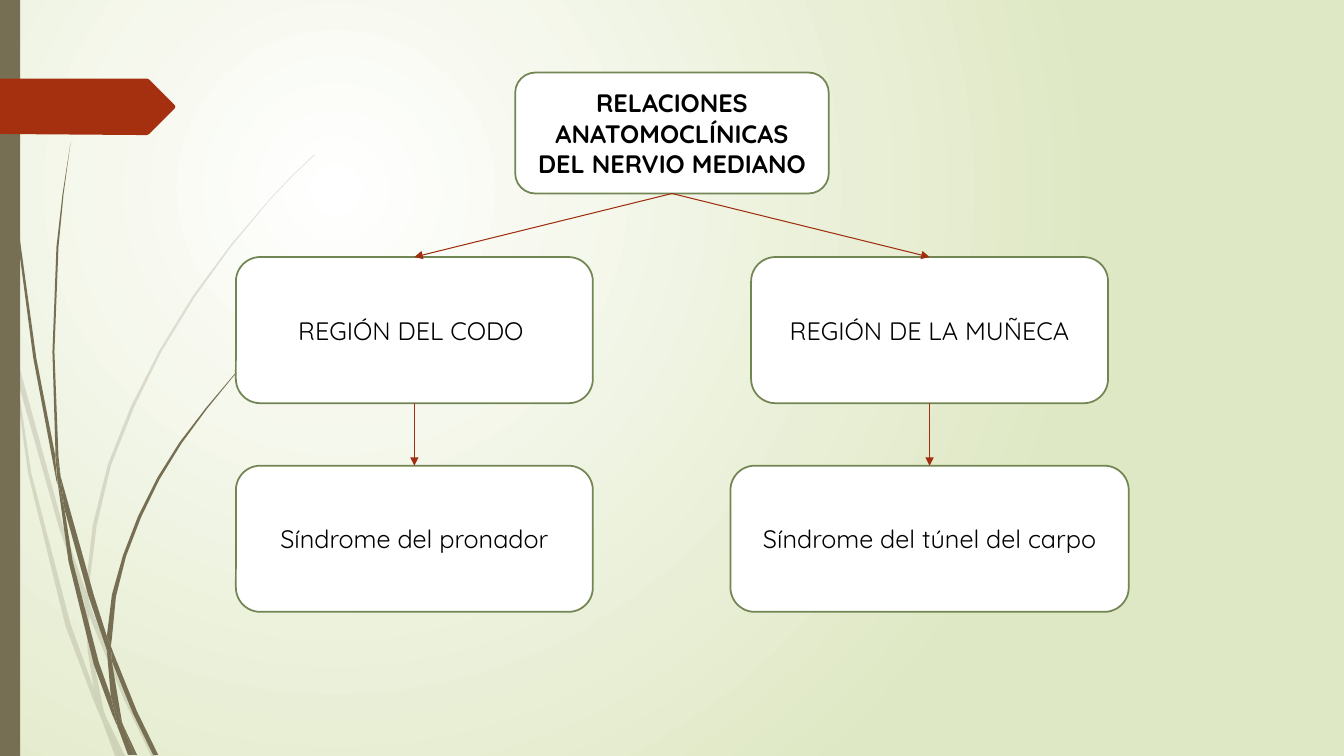
from pptx import Presentation
from pptx.dml.color import RGBColor
from pptx.enum.shapes import MSO_CONNECTOR, MSO_SHAPE
from pptx.enum.text import MSO_ANCHOR, PP_ALIGN
from pptx.oxml.ns import qn
from pptx.util import Inches, Pt
from lxml.etree import SubElement

WIDTH, HEIGHT = 13.33, 7.5
COLORS = {
    "white": "FFFFFF", "leaf": "DFE8C4", "stem": "766F54", "tag": "A53010",
    "border": "728653", "arrow": "9E2E0F", "text": "000000",
}
TITLE_ROW, REGION_ROW, SYNDROME_ROW = (0.72, 1.2), (2.55, 1.45), (4.62, 1.45)
LEFT_COLUMN, MIDDLE, RIGHT_COLUMN = 4.11, WIDTH / 2, 9.22
BOXES = {
    "nerve": ("RELACIONES ANATOMOCLÍNICAS DEL NERVIO MEDIANO", MIDDLE, 3.11, TITLE_ROW, True),
    "elbow": ("REGIÓN DEL CODO ", LEFT_COLUMN, 3.54, REGION_ROW, False),
    "wrist": ("REGIÓN DE LA MUÑECA", RIGHT_COLUMN, 3.54, REGION_ROW, False),
    "pronator": ("Síndrome del pronador", LEFT_COLUMN, 3.54, SYNDROME_ROW, False),
    "carpal": ("Síndrome del túnel del carpo", RIGHT_COLUMN, 3.95, SYNDROME_ROW, False),
}
ARROWS = [("nerve", "elbow"), ("nerve", "wrist"), ("elbow", "pronator"), ("wrist", "carpal")]

PALE_STEMS = [
    [(0.11, 3.5), (0.09, 3.22), (0, 2.82), (0, 2.99), (0.1, 3.44)],
    [(0.58, 5.22), (0.84, 5.99), (0.85, 5.86), (0.62, 5.2), (0.14, 3.45), (0.17, 3.76)],
    [(0.92, 6.07), (0.88, 5.96), (0.88, 6.1), (1.23, 6.94), (1.5, 7.5), (1.55, 7.5), (1.27, 6.92)],
    [(1.19, 7.5), (1.24, 7.5), (1.05, 7.11)],
    [(0.93, 6.83), (0.7, 6.19), (0.31, 4.69), (0.17, 3.76), (0.11, 3.5), (0.28, 4.7),
     (0.65, 6.21), (0.92, 6.93), (1.01, 7.14), (0.99, 7.07)],
    [(0.84, 5.99), (0.87, 6.46), (0.93, 6.83), (0.96, 6.92), (1.05, 7.11), (1.03, 7.06),
     (0.91, 6.46), (0.88, 6.1), (0.88, 6.08)],
    [(0.88, 5.84), (0.96, 5.21), (1.1, 4.62), (1.33, 4.04), (1.6, 3.49), (1.93, 2.95),
     (2.29, 2.45), (2.68, 1.98), (2.9, 1.75), (3.12, 1.54), (3.12, 1.53), (2.89, 1.75),
     (2.68, 1.97), (2.28, 2.44), (1.91, 2.94), (1.58, 3.48), (1.3, 4.03), (1.07, 4.61),
     (0.92, 5.21), (0.85, 5.84), (0.85, 5.86), (0.88, 5.96)],
    [(1.01, 7.14), (1.14, 7.5), (1.19, 7.5)],
    [(0.88, 6.08), (0.88, 6.1), (0.88, 5.96), (0.85, 5.86), (0.84, 5.99)],
    [(0.96, 6.92), (0.93, 6.83), (0.99, 7.07), (1.01, 7.14), (1.19, 7.5), (1.05, 7.11)],
]
DARK_STEMS = [
    [(0.07, 1.1), (0.17, 2.33), (0.33, 3.55), (0.56, 4.77), (0.57, 4.81), (0.55, 4.57),
     (0.55, 4.53), (0.36, 3.55), (0.19, 2.32), (0.08, 1.09), (0.05, 0.48), (0.04, 0),
     (0.03, 0), (0.04, 0.48)],
    [(0.88, 5.92), (1.06, 6.45), (1.06, 6.31), (0.93, 5.9), (0.6, 4.72), (0.64, 5.05)],
    [(1.13, 6.49), (1.1, 6.41), (1.11, 6.56), (1.32, 7.08), (1.52, 7.49), (1.57, 7.49), (1.36, 7.06)],
    [(1.1, 6.91), (0.98, 6.57), (0.72, 5.56), (0.64, 5.05), (0.57, 4.77), (0.68, 5.57),
     (0.93, 6.59), (1.11, 7.08), (1.17, 7.22), (1.16, 7.17)],
    [(0.6, 4.72), (0.58, 4.53), (0.54, 3.49), (0.58, 2.45), (0.63, 1.93), (0.7, 1.41),
     (0.62, 1.93), (0.56, 2.45), (0.52, 3.49), (0.55, 4.49)],
    [(1.33, 7.49), (1.36, 7.49), (1.22, 7.19)],
    [(0.57, 4.77), (0.64, 5.05), (0.6, 4.72), (0.55, 4.49), (0.55, 4.53)],
    [(1.11, 6.33), (1.15, 5.92), (1.25, 5.52), (1.4, 5.13), (1.58, 4.76), (1.8, 4.4),
     (2.05, 4.06), (2.31, 3.74), (2.45, 3.59), (2.61, 3.44), (2.6, 3.44), (2.45, 3.58),
     (2.31, 3.73), (2.04, 4.05), (1.78, 4.39), (1.56, 4.74), (1.37, 5.12), (1.22, 5.51),
     (1.11, 5.9), (1.06, 6.31), (1.1, 6.41)],
    [(1.17, 7.22), (1.27, 7.49), (1.31, 7.49)],
    [(1.06, 6.45), (1.1, 6.91), (1.16, 7.06), (1.22, 7.19), (1.21, 7.16), (1.11, 6.56), (1.09, 6.51)],
    [(1.06, 6.45), (1.09, 6.51), (1.11, 6.56), (1.1, 6.41), (1.06, 6.31)],
    [(1.16, 7.06), (1.1, 6.91), (1.16, 7.17), (1.17, 7.22), (1.3, 7.49), (1.33, 7.49), (1.22, 7.19)],
]
TAG = [(0, 0.78), (1.46, 0.78), (1.48, 0.79), (1.73, 1.04), (1.74, 1.06), (1.73, 1.08),
       (1.48, 1.33), (1.46, 1.34), (1.36, 1.34), (0, 1.33)]


def color(name):
    return RGBColor.from_string(COLORS[name])


def paint(shape, fill, border=None):
    shape.shadow.inherit = False
    shape.fill.solid()
    shape.fill.fore_color.rgb = color(fill)
    if border:
        shape.line.color.rgb = color(border)
        shape.line.width = Pt(1.25)
    else:
        shape.line.fill.background()


def add_outline(page, points, fill, opacity=100):
    corners = [(Inches(x), Inches(y)) for x, y in points]
    builder = page.shapes.build_freeform(*corners[0])
    builder.add_line_segments(corners[1:], close=True)
    shape = builder.convert_to_shape()
    paint(shape, fill)
    if opacity < 100:
        tint = shape.element.spPr.find(".//" + qn("a:srgbClr"))
        SubElement(tint, qn("a:alpha"), val=str(opacity * 1000))


def add_background(page):
    fill = page.background.fill
    fill.gradient()
    for stop, name, position in zip(fill.gradient_stops, ("white", "leaf"), (0, 1)):
        stop.color.rgb = color(name)
        stop.position = position
    gradient = page.element.find(".//" + qn("a:gradFill"))
    gradient.remove(gradient.find(qn("a:lin")))
    circle = SubElement(gradient, qn("a:path"), path="circle")
    SubElement(circle, qn("a:fillToRect"), l="50000", t="50000", r="100000", b="100000")


def add_box(page, text, center, width, row, bold):
    top, height = row
    box = page.shapes.add_shape(MSO_SHAPE.ROUNDED_RECTANGLE, Inches(center - width / 2),
                                Inches(top), Inches(width), Inches(height))
    paint(box, "white", "border")
    box.text_frame.word_wrap = True
    box.text_frame.vertical_anchor = MSO_ANCHOR.MIDDLE
    para = box.text_frame.paragraphs[0]
    para.alignment = PP_ALIGN.CENTER
    span = para.add_run()
    span.text = text
    for name, value in {"name": "Quicksand", "size": Pt(18), "bold": bold}.items():
        setattr(span.font, name, value)
    span.font.color.rgb = color("text")
    return box


def add_arrow(page, start, end):
    arrow = page.shapes.add_connector(MSO_CONNECTOR.STRAIGHT, 0, 0, 0, 0)
    arrow.begin_connect(start, 2)
    arrow.end_connect(end, 0)
    arrow.line.color.rgb = color("arrow")
    arrow.line.width = Pt(0.75)
    line = arrow.element.spPr.find(qn("a:ln"))
    SubElement(line, qn("a:tailEnd"), type="triangle")
    SubElement(arrow.element.spPr, qn("a:effectLst"))


def main():
    deck = Presentation()
    deck.slide_width, deck.slide_height = Inches(WIDTH), Inches(HEIGHT)
    page = deck.slides.add_slide(deck.slide_layouts[6])
    add_background(page)
    for stems, opacity in ((PALE_STEMS, 20), (DARK_STEMS, 100)):
        for points in stems:
            add_outline(page, points, "stem", opacity)
    band = page.shapes.add_shape(MSO_SHAPE.RECTANGLE, 0, 0, Inches(0.2), Inches(HEIGHT))
    paint(band, "stem")
    add_outline(page, TAG, "tag")
    boxes = {name: add_box(page, *content) for name, content in BOXES.items()}
    for start, end in ARROWS:
        add_arrow(page, boxes[start], boxes[end])
    deck.save("out.pptx")


if __name__ == "__main__":
    main()
